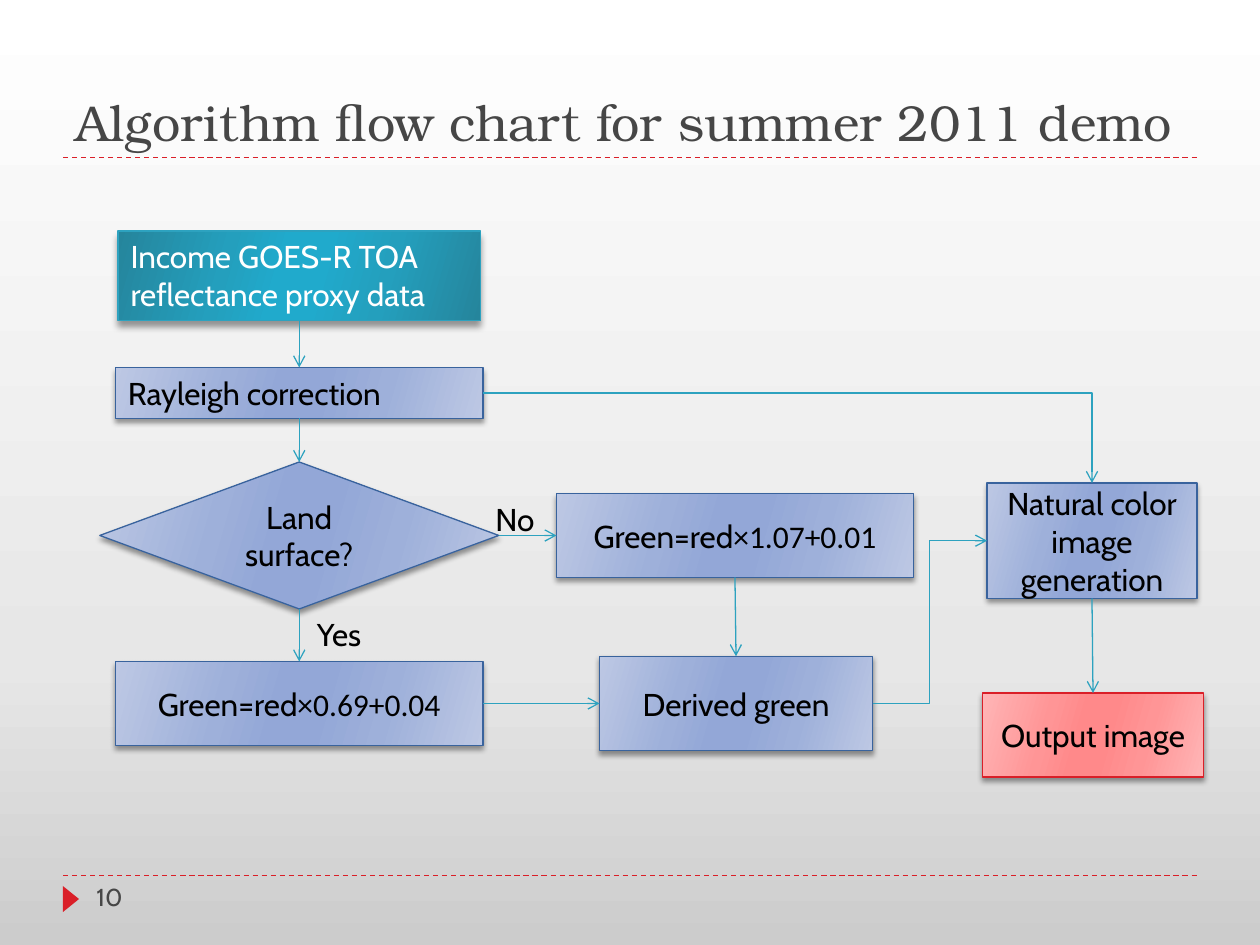
"""Build the algorithm flow chart slide for the summer 2011 demo."""
import pptx
import pptx.dml.color
import pptx.enum.dml
import pptx.enum.shapes
import pptx.enum.text
import pptx.oxml
import pptx.oxml.ns
import pptx.util

RGB = pptx.dml.color.RGBColor.from_string
SHAPE = pptx.enum.shapes.MSO_SHAPE
CONNECTOR = pptx.enum.shapes.MSO_CONNECTOR
ANCHOR = pptx.enum.text.MSO_ANCHOR
ALIGN = pptx.enum.text.PP_ALIGN
FIT = pptx.enum.text.MSO_AUTO_SIZE
NAMESPACE = pptx.oxml.ns.nsdecls("a")

THEME = {
    "heading_font": "TeX Gyre Bonum", "body_font": "Cabin", "number_font": "Calibri",
    "title_size": 28.8, "body_size": 18, "page_size": 14, "line_width": 0.75,
    "grey": "464646", "black": "000000", "white": "FFFFFF", "red": "DA1F28", "teal": "2DA2BF",
    "background": [(0, "CCCCCC"), (30, "E7E7E7"), (100, "FFFFFF")],
    "input": {"shades": ("25859C", "249FBD", "20AACC"), "line": "2DA2BF", "text": "white", "blur": 4, "drop": 3.4},
    "step": {"shades": ("BDC8E4", "9EB0DA", "93A7D7"), "line": "39639D", "text": "black", "blur": 3, "drop": 2},
    "output": {"shades": ("FFB5B6", "FF9596", "FF898A"), "line": "DA1F28", "text": "black", "blur": 3, "drop": 2},
}

presentation = pptx.Presentation()
presentation.slide_width = pptx.util.Inches(10)
presentation.slide_height = pptx.util.Inches(7.5)
CELL = presentation.slide_width / 120
slide = presentation.slides.add_slide(presentation.slide_layouts[5])


def apply_gradient(fill, element, stops, angle):
    """Fill an element with a linear gradient of (percent, colour) stops."""
    fill.gradient()
    gradient = element.xpath(".//a:gradFill")[0]
    stop_list = gradient.xpath("a:gsLst")[0]
    stop_list.clear()
    for position, colour in stops:
        stop_list.append(pptx.oxml.parse_xml(
            f'<a:gs {NAMESPACE} pos="{position * 1000}"><a:srgbClr val="{colour}"/></a:gs>'))
    gradient.xpath("a:lin")[0].set("ang", str(angle * 60000))


def write_text(shape, runs, size, colour, alignment, frame_format):
    """Write runs of (text, font name) as the only paragraph of a shape."""
    for name, value in frame_format.items():
        setattr(shape.text_frame, name, value)
    paragraph = shape.text_frame.paragraphs[0]
    paragraph.alignment = alignment
    for text, font_name in runs:
        run = paragraph.add_run()
        run.text = text
        font_format = {"name": THEME[font_name], "size": pptx.util.Pt(THEME[size])}
        for name, value in font_format.items():
            setattr(run.font, name, value)
        run.font.color.rgb = RGB(THEME[colour])


apply_gradient(slide.background.fill, slide.element, THEME["background"], 270)

title = slide.shapes.title
title_place = {"left": 6, "top": 2, "width": 108, "height": 13}
for name, cells in title_place.items():
    setattr(title, name, round(cells * CELL))
write_text(title, [("Algorithm flow chart for summer 2011 demo", "heading_font")], "title_size", "grey",
           ALIGN.LEFT, {"vertical_anchor": ANCHOR.BOTTOM, "word_wrap": True, "auto_size": FIT.NONE})

for row in (15, 83.4):
    rule = slide.shapes.add_connector(
        CONNECTOR.STRAIGHT, *(round(cells * CELL) for cells in (6, row, 114, row)))
    rule.line.color.rgb = RGB(THEME["red"])
    rule.line.width = pptx.util.Pt(THEME["line_width"])
    rule.line.dash_style = pptx.enum.dml.MSO_LINE.DASH
    rule.element.spPr.append(pptx.oxml.parse_xml(f"<a:effectLst {NAMESPACE}/>"))

marker = slide.shapes.add_shape(
    SHAPE.ISOSCELES_TRIANGLE, *(round(cells * CELL) for cells in (5.5, 84.85, 2.5, 1.55)))
marker.rotation = 90
marker.shadow.inherit = False
marker.fill.solid()
marker.fill.fore_color.rgb = RGB(THEME["red"])
marker.line.fill.background()

TOP_LEFT = {"vertical_anchor": ANCHOR.TOP, "word_wrap": True}
MIDDLE = {"vertical_anchor": ANCHOR.MIDDLE, "word_wrap": True}
boxes = [
    ("income", SHAPE.RECTANGLE, (11.25, 22, 34.5, 8.5), "input", ALIGN.LEFT, TOP_LEFT,
     [("Income GOES-R TOA reflectance proxy data", "body_font")]),
    ("rayleigh", SHAPE.RECTANGLE, (11, 35, 35, 4.85), "step", ALIGN.LEFT, TOP_LEFT,
     [("Rayleigh correction", "body_font")]),
    ("land", SHAPE.FLOWCHART_DECISION, (9.5, 44, 38, 14), "step", ALIGN.CENTER, MIDDLE,
     [("Land surface?", "body_font")]),
    ("land green", SHAPE.FLOWCHART_PROCESS, (11, 63, 35, 8), "step", ALIGN.CENTER, MIDDLE,
     [("Green=red", "body_font"), ("×0.69+0.04", "number_font")]),
    ("other green", SHAPE.FLOWCHART_PROCESS, (53, 47, 34, 8), "step", ALIGN.CENTER, MIDDLE,
     [("Green=red", "body_font"), ("×1.07+0.01", "number_font")]),
    ("natural", SHAPE.FLOWCHART_PROCESS, (94, 46, 20, 11), "step", ALIGN.CENTER, MIDDLE,
     [("Natural color image generation", "body_font")]),
    ("output", SHAPE.FLOWCHART_PROCESS, (93.6, 66, 21, 8), "output", ALIGN.CENTER, MIDDLE,
     [("Output image", "body_font")]),
    ("derived", SHAPE.FLOWCHART_PROCESS, (57.1, 62.5, 26, 9), "step", ALIGN.CENTER, MIDDLE,
     [("Derived green", "body_font")]),
]
nodes = {}
for key, kind, place, style_name, alignment, frame_format, runs in boxes:
    style = THEME[style_name]
    shape = slide.shapes.add_shape(kind, *(round(cells * CELL) for cells in place))
    rim, band, core = style["shades"]
    stops = zip((0, 30, 45, 55, 73, 100), (rim, band, core, core, band, rim))
    apply_gradient(shape.fill, shape.element, stops, 16)
    shape.line.color.rgb = RGB(style["line"])
    shape.line.width = pptx.util.Pt(THEME["line_width"])
    shape.shadow.inherit = False
    shape.element.xpath(".//a:effectLst")[0].append(pptx.oxml.parse_xml(
        f'<a:outerShdw {NAMESPACE} blurRad="{pptx.util.Pt(style["blur"])}" dist="{pptx.util.Pt(style["drop"])}"'
        ' dir="5400000" rotWithShape="0"><a:srgbClr val="000000"><a:alpha val="40000"/></a:srgbClr></a:outerShdw>'))
    write_text(shape, runs, "body_size", style["text"], alignment, frame_format)
    nodes[key] = shape

TOP, LEFT, BOTTOM, RIGHT = range(4)
arrows = [
    ("income", BOTTOM, "rayleigh", TOP, "line"),
    ("rayleigh", BOTTOM, "land", TOP, "line"),
    ("land", BOTTOM, "land green", TOP, "line"),
    ("land", RIGHT, "other green", LEFT, "line"),
    ("land green", RIGHT, "derived", LEFT, "line"),
    ("other green", BOTTOM, "derived", TOP, "line"),
    ("derived", RIGHT, "natural", LEFT, "bentConnector3"),
    ("rayleigh", RIGHT, "natural", TOP, "bentConnector2"),
    ("natural", BOTTOM, "output", TOP, "line"),
]
for start, start_side, end, end_side, preset in arrows:
    kind = CONNECTOR.STRAIGHT if preset == "line" else CONNECTOR.ELBOW
    arrow = slide.shapes.add_connector(kind, 0, 0, 0, 0)
    arrow.begin_connect(nodes[start], start_side)
    arrow.end_connect(nodes[end], end_side)
    arrow.element.xpath(".//a:prstGeom")[0].set("prst", preset)
    arrow.line.color.rgb = RGB(THEME["teal"])
    arrow.line.width = pptx.util.Pt(THEME["line_width"])
    arrow.element.xpath(".//a:ln")[0].append(pptx.oxml.parse_xml(f'<a:tailEnd {NAMESPACE} type="arrow"/>'))
    arrow.element.spPr.append(pptx.oxml.parse_xml(f"<a:effectLst {NAMESPACE}/>"))

GROWING = {"word_wrap": False, "auto_size": FIT.SHAPE_TO_FIT_TEXT}
labels = [
    ("Yes", (29, 58, 7.3, 4.85), "body_size", "black", GROWING),
    ("No", (46, 47, 6.2, 4.85), "body_size", "black", GROWING),
    ("10", (8, 83.4, 26, 4.8), "page_size", "grey", TOP_LEFT),
]
for text, place, size, colour, frame_format in labels:
    label = slide.shapes.add_textbox(*(round(cells * CELL) for cells in place))
    write_text(label, [(text, "body_font")], size, colour, ALIGN.LEFT, frame_format)

presentation.save("out.pptx")
